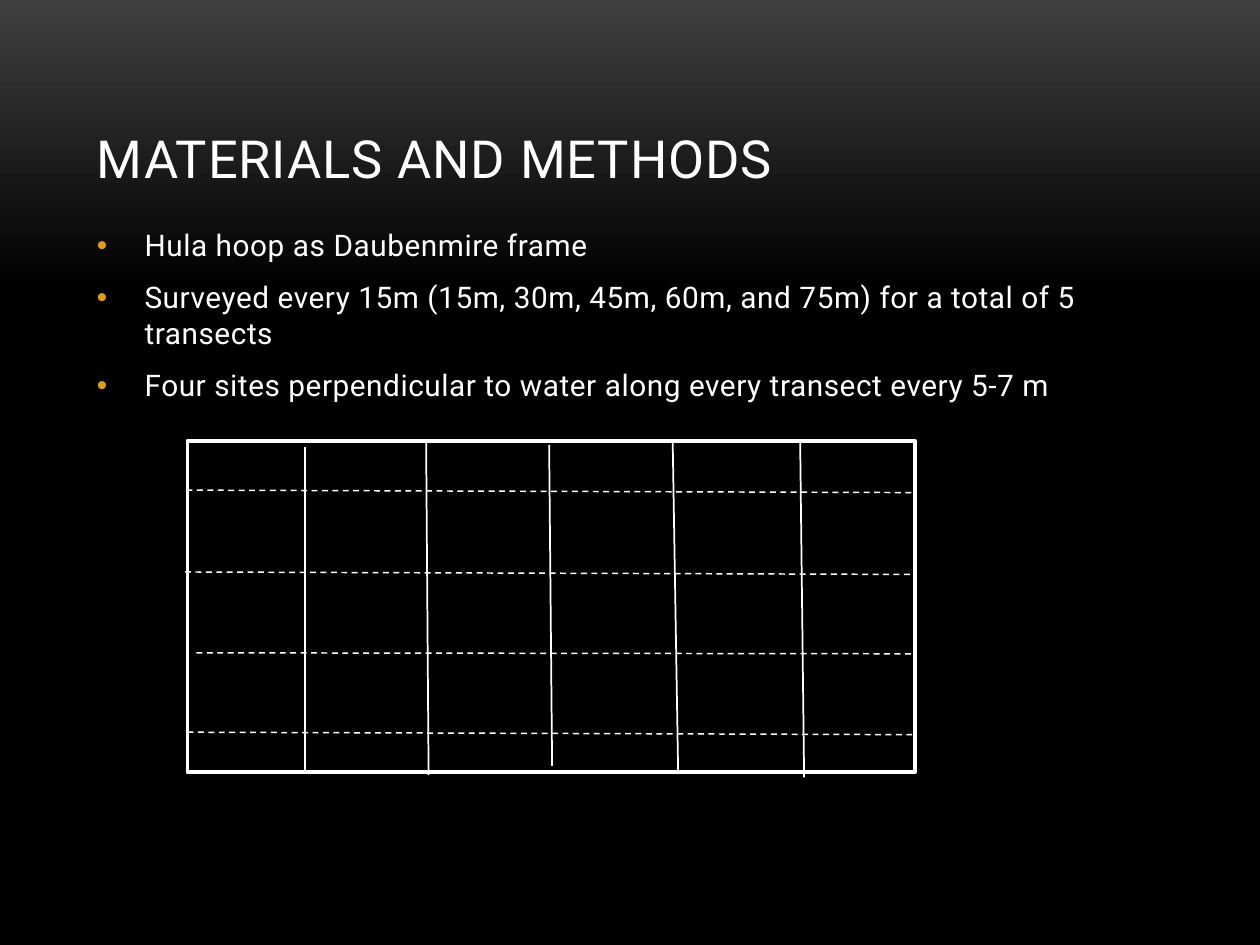
from copy import deepcopy
from dataclasses import dataclass

from lxml import etree
from pptx import Presentation
from pptx import util as u
from pptx.dml.color import RGBColor
from pptx.enum import dml, shapes, text
from pptx.oxml import ns


@dataclass(frozen=True)
class Theme:
    font: str = "Roboto"
    ink: RGBColor = RGBColor(0xFF, 0xFF, 0xFF)
    glow: RGBColor = RGBColor(0x3F, 0x3F, 0x3F)
    ground: RGBColor = RGBColor(0, 0, 0)
    bullet: RGBColor = RGBColor(0xDC, 0x9E, 0x1F)
    title_size: u.Length = u.Pt(30)
    body_size: u.Length = u.Pt(17)


theme = Theme()


def add_text(paragraph, words, size, spacing):
    run = paragraph.add_run()
    run.text = words
    run.font.name = theme.font
    run.font.size = size
    run.font.color.rgb = theme.ink
    run.font._element.set("spc", str(spacing))


def add_line(slide, ends, width, dash=None):
    line = slide.shapes.add_connector(
        shapes.MSO_CONNECTOR.STRAIGHT, *[u.Cm(value) for value in ends])
    line.line.color.rgb = theme.ink
    line.line.width = u.Pt(width)
    if dash is not None:
        line.line.dash_style = dash
    etree.SubElement(line._element.spPr, ns.qn("a:effectLst"))


presentation = Presentation()
presentation.slide_width = u.Cm(25.4)
presentation.slide_height = u.Cm(19.05)
slide = presentation.slides.add_slide(presentation.slide_layouts[1])

# Background: grey fading to black from the top
fill = slide.background.fill
fill.gradient()
fill.gradient_angle = 270
stops = fill.gradient_stops
for stop, position, color in zip(stops, (0, 0.31), (theme.glow, theme.ground)):
    stop.position = position
    stop.color.rgb = color
stop_list = slide.background._cSld.find(".//" + ns.qn("a:gsLst"))
last_stop = deepcopy(stop_list[-1])
last_stop.set("pos", "100000")
stop_list.append(last_stop)

# Title
title = slide.shapes.title
title.left, title.top = u.Cm(1.7), u.Cm(0.76)
title.width, title.height = u.Cm(22.02), u.Cm(3.18)
title.text_frame.auto_size = text.MSO_AUTO_SIZE.NONE
title.text_frame.vertical_anchor = text.MSO_ANCHOR.BOTTOM
paragraph = title.text_frame.paragraphs[0]
paragraph.alignment = text.PP_ALIGN.LEFT
add_text(paragraph, "MATERIALS AND METHODS", theme.title_size, 50)

# Bulleted list
body = slide.placeholders[1]
body.left, body.top = u.Cm(1.7), u.Cm(4.45)
body.width, body.height = u.Cm(22.02), u.Cm(11.43)
frame = body.text_frame
frame.auto_size = text.MSO_AUTO_SIZE.NONE
methods = (
    "Hula hoop as Daubenmire frame",
    "Surveyed every 15m (15m, 30m, 45m, 60m, and 75m) for a total of 5 transects",
    "Four sites perpendicular to water along every transect every 5-7 m",
)
for index, method in enumerate(methods):
    paragraph = frame.add_paragraph() if index else frame.paragraphs[0]
    paragraph.space_before = u.Pt(3.4 if index else 0)
    paragraph.space_after = u.Pt(6)
    properties = paragraph._p.get_or_add_pPr()
    properties.set("marL", str(u.Cm(0.96)))
    properties.set("indent", str(-u.Cm(0.96)))
    bullet_color = etree.SubElement(properties, ns.qn("a:buClr"))
    etree.SubElement(bullet_color, ns.qn("a:srgbClr"), val=str(theme.bullet))
    etree.SubElement(properties, ns.qn("a:buFont"), typeface="Arial")
    etree.SubElement(properties, ns.qn("a:buChar"), char="•")
    add_text(paragraph, method, theme.body_size, 30)

# Survey area
area = slide.shapes.add_shape(
    shapes.MSO_SHAPE.RECTANGLE, u.Cm(3.78), u.Cm(8.89), u.Cm(14.66), u.Cm(6.68))
area.shadow.inherit = False
area.fill.background()
area.line.color.rgb = theme.ink
area.line.width = u.Pt(2.25)

# Transects: hand-drawn, so each has its own ends
transects = (
    (6.15, 9.02, 6.15, 15.54),
    (8.59, 8.89, 8.64, 15.62),
    (11.07, 8.97, 11.13, 15.44),
    (13.56, 8.86, 13.67, 15.54),
    (16.13, 8.89, 16.21, 15.67),
)
for ends in transects:
    add_line(slide, ends, 1)

# Rows of sites
site_rows = (
    (3.76, 9.88, 18.42, 9.93),
    (3.73, 11.53, 18.39, 11.58),
    (3.96, 13.16, 18.39, 13.18),
    (3.78, 14.76, 18.44, 14.81),
)
for ends in site_rows:
    add_line(slide, ends, 0.85, dml.MSO_LINE.DASH)

presentation.save("out.pptx")
